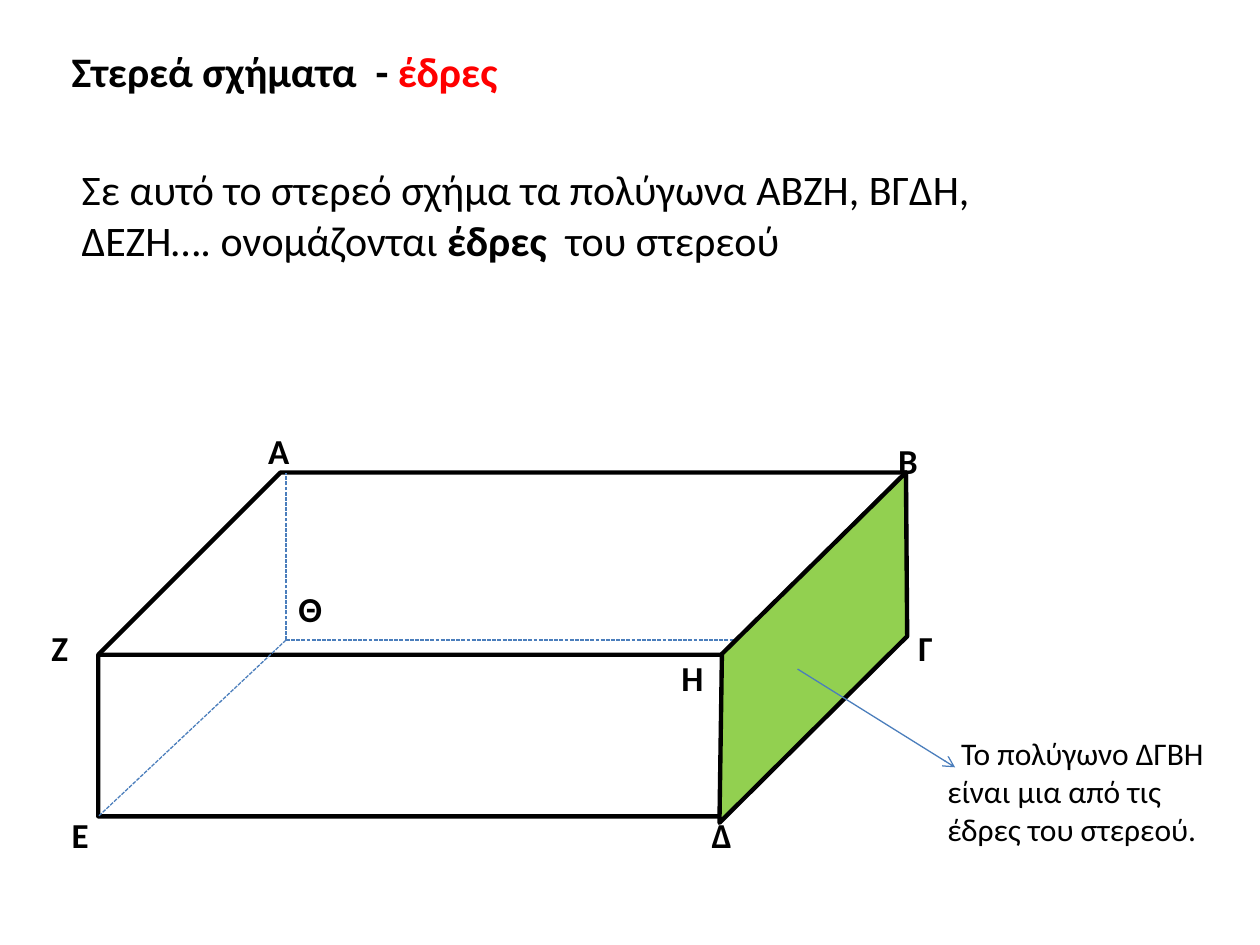
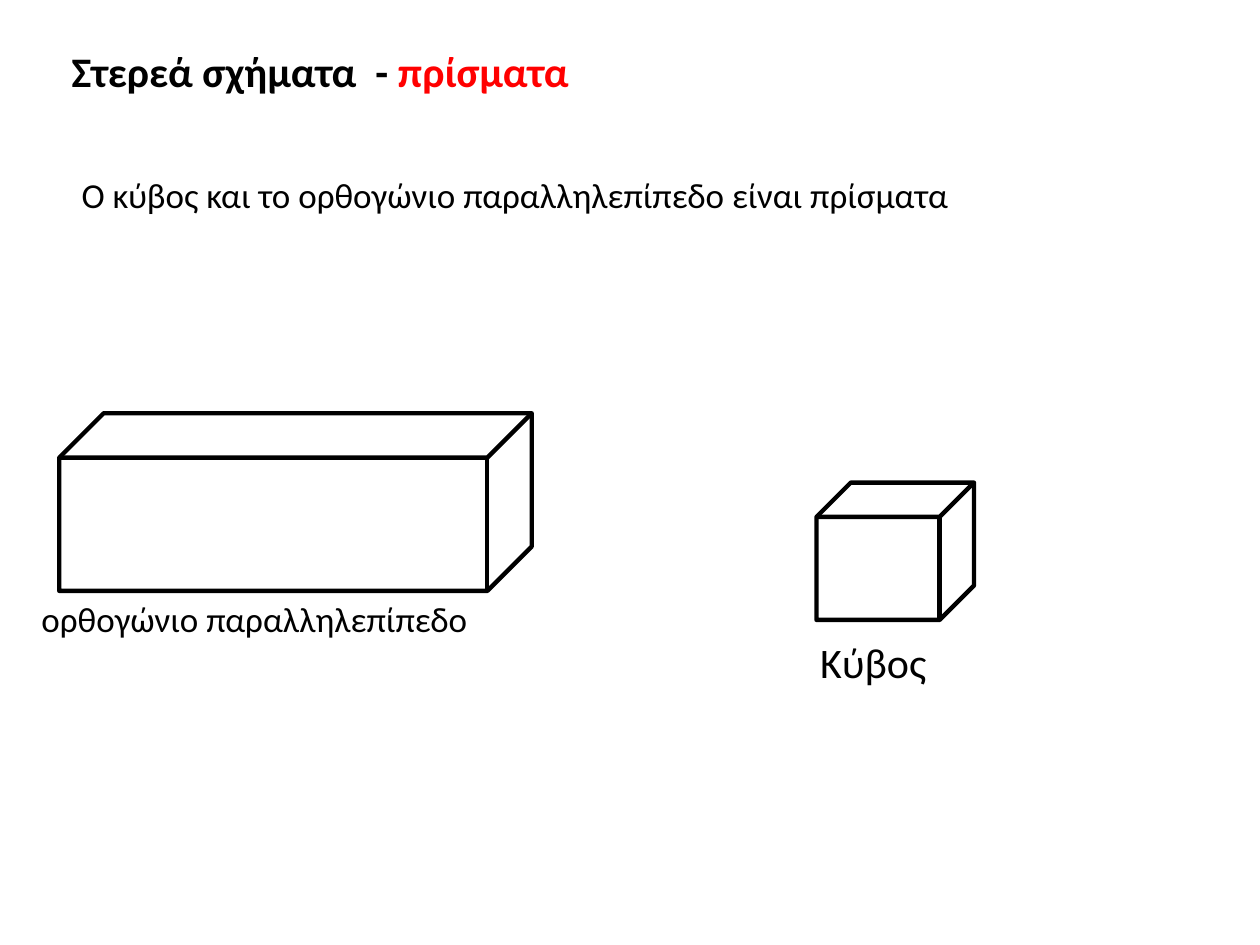
from lxml import etree
from pptx import Presentation
from pptx import util as u
from pptx.dml.color import RGBColor
from pptx.enum import dml, shapes, text
from pptx.oxml import ns

PX = 9144
BLACK, RED, BLUE, GREEN = "000000", "FF0000", "4B7EBC", "92D050"
color = RGBColor.from_string


def write(page, left, top, width, height, size, *spans, indent=0):
    box = page.shapes.add_textbox(left * PX, top * PX, width * PX, height * PX)
    frame = box.text_frame
    frame.word_wrap = True
    frame.auto_size = text.MSO_AUTO_SIZE.SHAPE_TO_FIT_TEXT
    para = frame.paragraphs[0]
    if indent:
        para._p.get_or_add_pPr().set("indent", str(indent * PX))
    para.font.name = "Calibri"
    para.font.size = u.Pt(size)
    for words, bold, tint in spans:
        span = para.add_run()
        span.text = words
        span.font.bold = bold
        span.font.color.rgb = color(tint)


def draw_line(page, start, end):
    line = page.shapes.add_connector(
        shapes.MSO_CONNECTOR.STRAIGHT, *[n * PX for n in (*start, *end)])
    line.line.color.rgb = color(BLUE)
    line.line.width = u.Pt(0.75)
    etree.SubElement(line._element.spPr, ns.qn("a:effectLst"))
    return line


deck = Presentation()
deck.slide_width, deck.slide_height = 1000 * PX, 750 * PX
faces, prisms = [deck.slides.add_slide(deck.slide_layouts[6]) for _ in range(2)]

for page, width, topic in [(faces, 852, "έδρες"), (prisms, 680, "πρίσματα")]:
    write(page, 47, 31, width, 50, 24,
          ("Στερεά σχήματα  - ", True, BLACK), (topic, True, RED))

for page, left, top, width, height, depth in [
    (faces, 78, 375, 641, 273, 0.53),
    (prisms, 47, 328, 375, 141, 0.25),
    (prisms, 648, 383, 125, 109, 0.25),
]:
    cube = page.shapes.add_shape(
        shapes.MSO_SHAPE.CUBE, left * PX, top * PX, width * PX, height * PX)
    cube.adjustments[0] = depth
    cube.shadow.inherit = False
    cube.fill.background()
    cube.line.color.rgb = color(BLACK)
    cube.line.width = u.Pt(2.5)

hidden_corner = (227, 508)
for corner in [(78, 648), (719, 508), (227, 375)]:
    edge = draw_line(faces, hidden_corner, corner)
    edge.line.dash_style = dml.MSO_LINE.SQUARE_DOT

for letter, left, top in [
    ("Α", 203, 336), ("Β", 703, 344), ("Γ", 719, 492), ("Η", 531, 516),
    ("Ζ", 31, 492), ("Θ", 227, 461), ("Ε", 47, 641), ("Δ", 555, 641),
]:
    write(faces, left, top, 55, 44, 20, (letter, True, BLACK))

write(faces, 55, 125, 727, 91, 24,
      ("Σε αυτό το στερεό σχήμα τα πολύγωνα ΑΒΖΗ, ΒΓΔΗ, ΔΕΖΗ…. ονομάζονται ", False, BLACK),
      ("έδρες ", True, BLACK), (" του στερεού", False, BLACK))
write(faces, 742, 578, 234, 101, 18,
      ("Το πολύγωνο ΔΓΒΗ είναι μια από τις έδρες του στερεού.", False, BLACK), indent=11)

outline = faces.shapes.build_freeform(573, 519, scale=PX)
outline.add_line_segments([(719, 375), (720, 505), (571, 653)], close=True)
side_face = outline.convert_to_shape()
side_face.shadow.inherit = False
side_face.fill.solid()
side_face.fill.fore_color.rgb = color(GREEN)
side_face.line.color.rgb = color(BLACK)
side_face.line.width = u.Pt(2.5)

pointer = draw_line(faces, (633, 531), (758, 609))
etree.SubElement(pointer.line._get_or_add_ln(), ns.qn("a:tailEnd"), type="arrow")

for left, top, width, height, size, words in [
    (55, 133, 813, 77, 20, "Ο κύβος και το ορθογώνιο παραλληλεπίπεδο είναι πρίσματα"),
    (641, 500, 148, 50, 24, "Κύβος"),
    (23, 469, 461, 44, 20, "ορθογώνιο παραλληλεπίπεδο"),
]:
    write(prisms, left, top, width, height, size, (words, False, BLACK))

deck.save("out.pptx")
